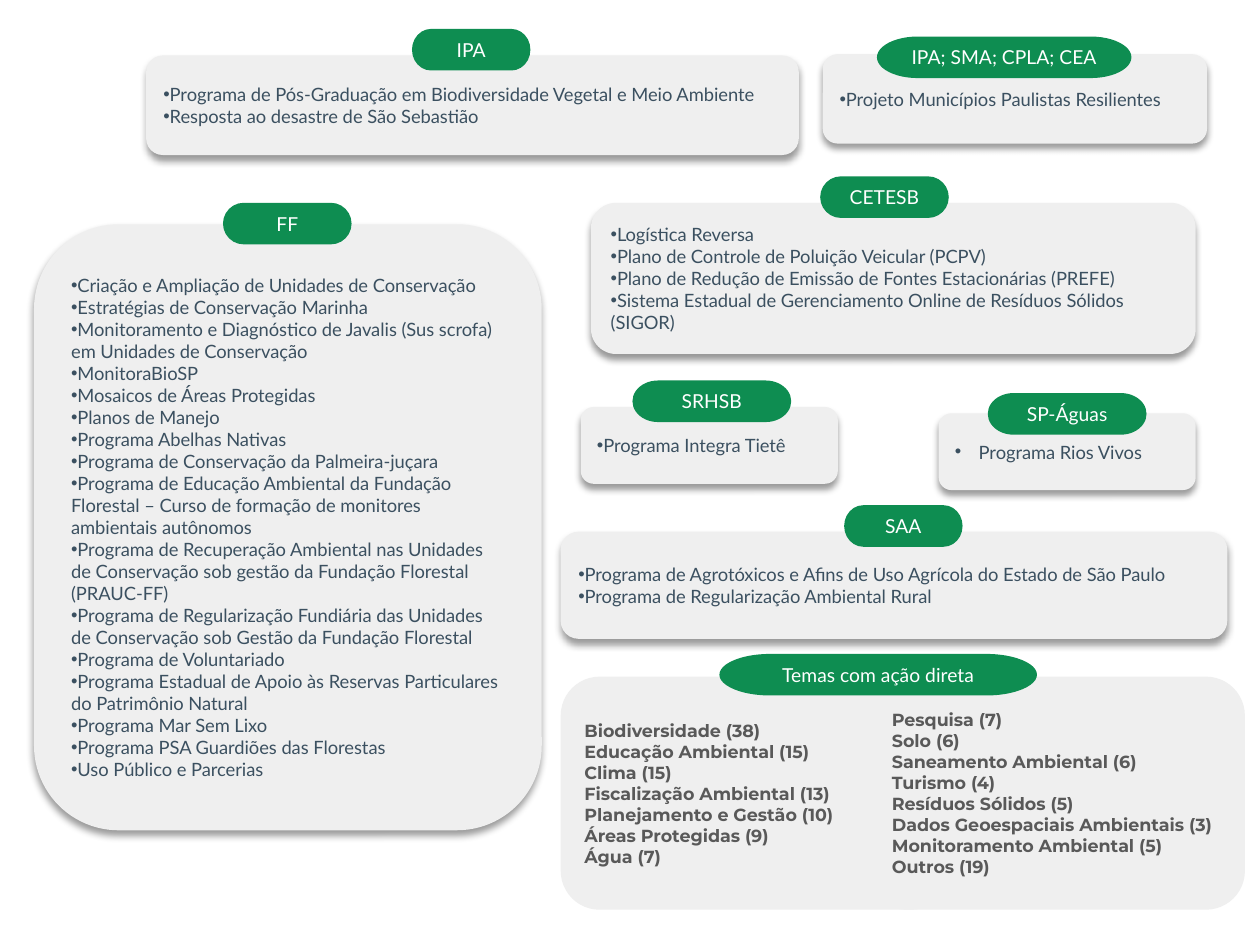
from lxml.etree import SubElement
from pptx import Presentation
from pptx.dml.color import RGBColor
from pptx.enum.shapes import MSO_SHAPE
from pptx.enum.text import MSO_ANCHOR, PP_ALIGN
from pptx.oxml import parse_xml
from pptx.oxml.ns import nsdecls, qn
from pptx.util import Pt

PX = 9144  # EMU per px, 100 px to the inch
GREY, GREEN, SLATE, DARK, WHITE = "EFEFEF", "0E8D51", "3B5060", "595959", "FFFFFF"
LABEL_HEIGHT = 33
SHADOW = (
    f'<a:effectLst {nsdecls("a")}><a:outerShdw blurRad="{Pt(4)}" dist="{Pt(3)}" '
    'dir="5400000" algn="t" rotWithShape="0"><a:srgbClr val="000000">'
    '<a:alpha val="40000"/></a:srgbClr></a:outerShdw></a:effectLst>'
)

# label, label (left, top, width), panel (left, top, width, height), programmes
agencies = [
    ("IPA", (327, 23, 94), (116, 44, 518, 79), [
        "Programa de Pós-Graduação em Biodiversidade Vegetal e Meio Ambiente",
        "Resposta ao desastre de São Sebastião",
    ]),
    ("IPA; SMA; CPLA; CEA", (696, 29, 202), (653, 43, 305, 71), [
        "Projeto Municípios Paulistas Resilientes",
    ]),
    ("SAA", (670, 401, 94), (445, 422, 529, 85), [
        "Programa de Agrotóxicos e Afins de Uso Agrícola do Estado de São Paulo",
        "Programa de Regularização Ambiental Rural",
    ]),
    ("FF", (177, 161, 102), (27, 178, 403, 481), [
        "Criação e Ampliação de Unidades de Conservação",
        "Estratégias de Conservação Marinha",
        "Monitoramento e Diagnóstico de Javalis (Sus scrofa) em Unidades de Conservação",
        "MonitoraBioSP",
        "Mosaicos de Áreas Protegidas",
        "Planos de Manejo",
        "Programa Abelhas Nativas",
        "Programa de Conservação da Palmeira-juçara",
        "Programa de Educação Ambiental da Fundação Florestal – "
        "Curso de formação de monitores ambientais autônomos",
        "Programa de Recuperação Ambiental nas Unidades de Conservação "
        "sob gestão da Fundação Florestal (PRAUC-FF)",
        "Programa de Regularização Fundiária das Unidades de Conservação "
        "sob Gestão da Fundação Florestal",
        "Programa de Voluntariado",
        "Programa Estadual de Apoio às Reservas Particulares do Patrimônio Natural",
        "Programa Mar Sem Lixo",
        "Programa PSA Guardiões das Florestas",
        "Uso Público e Parcerias",
    ]),
    ("CETESB", (651, 140, 102), (469, 161, 480, 120), [
        "Logística Reversa",
        "Plano de Controle de Poluição Veicular (PCPV)",
        "Plano de Redução de Emissão de Fontes Estacionárias (PREFE)",
        "Sistema Estadual de Gerenciamento Online de Resíduos Sólidos (SIGOR)",
    ]),
    ("SRHSB", (502, 302, 126), (461, 323, 204, 61), ["Programa Integra Tietê"]),
    ("SP-Águas", (784, 312, 126), (745, 328, 204, 61), ["Programa Rios Vivos"]),
]

# panel left, panel width, themes with their number of actions
theme_columns = [
    (445, 309, [
        ("Biodiversidade", 38), ("Educação Ambiental", 15), ("Clima", 15),
        ("Fiscalização Ambiental", 13), ("Planejamento e Gestão", 10),
        ("Áreas Protegidas", 9), ("Água", 7),
    ]),
    (689, 299, [
        ("Pesquisa", 7), ("Solo", 6), ("Saneamento Ambiental", 6), ("Turismo", 4),
        ("Resíduos Sólidos", 5), ("Dados Geoespaciais Ambientais", 3),
        ("Monitoramento Ambiental", 5), ("Outros", 19),
    ]),
]

prs = Presentation()
prs.slide_width, prs.slide_height = 1000 * PX, 750 * PX
slide = prs.slides.add_slide(prs.slide_layouts[6])


def add_box(preset, place, fill, lines, font, size, color, bold=False, align=PP_ALIGN.LEFT):
    """Add a filled shape with one paragraph for each line."""
    box = slide.shapes.add_shape(preset, *(length * PX for length in place))
    box.shadow.inherit = False
    box.fill.solid()
    box.fill.fore_color.rgb = RGBColor.from_string(fill)
    box.line.fill.background()
    frame = box.text_frame
    frame.word_wrap = True
    frame.vertical_anchor = MSO_ANCHOR.MIDDLE
    frame.text = "\n".join(lines)
    for paragraph in frame.paragraphs:
        paragraph.alignment = align
        for run in paragraph.runs:
            run.font.name = font
            run.font.size = Pt(size)
            run.font.bold = bold
            run.font.color.rgb = RGBColor.from_string(color)
    return box


def add_label(text, left, top, width):
    add_box(MSO_SHAPE.FLOWCHART_TERMINATOR, (left, top, width, LABEL_HEIGHT), GREEN,
            [text], "Lato", 11, WHITE, align=PP_ALIGN.CENTER)


for agency, label_place, panel_place, programmes in agencies:
    panel = add_box(MSO_SHAPE.ROUNDED_RECTANGLE, panel_place, GREY,
                    programmes, "Lato", 10.5, SLATE)
    properties = panel.element.spPr
    properties.replace(properties.find(qn("a:effectLst")), parse_xml(SHADOW))
    hanging = 19 * PX if agency == "SP-Águas" else 0
    for paragraph in panel.text_frame.paragraphs:
        bullet_properties = paragraph._p.get_or_add_pPr()
        bullet_properties.set("marL", str(hanging))
        bullet_properties.set("indent", str(-hanging))
        SubElement(bullet_properties, qn("a:buFont")).set("typeface", "Arial")
        SubElement(bullet_properties, qn("a:buChar")).set("char", "•")
    add_label(agency, *label_place)

for left, width, themes in theme_columns:
    add_box(MSO_SHAPE.ROUNDED_RECTANGLE, (left, 537, width, 185), GREY,
            [f"{theme} ({actions})" for theme, actions in themes],
            "Montserrat", 10, DARK, bold=True)
add_label("Temas com ação direta", 571, 519, 252)

prs.save("out.pptx")
